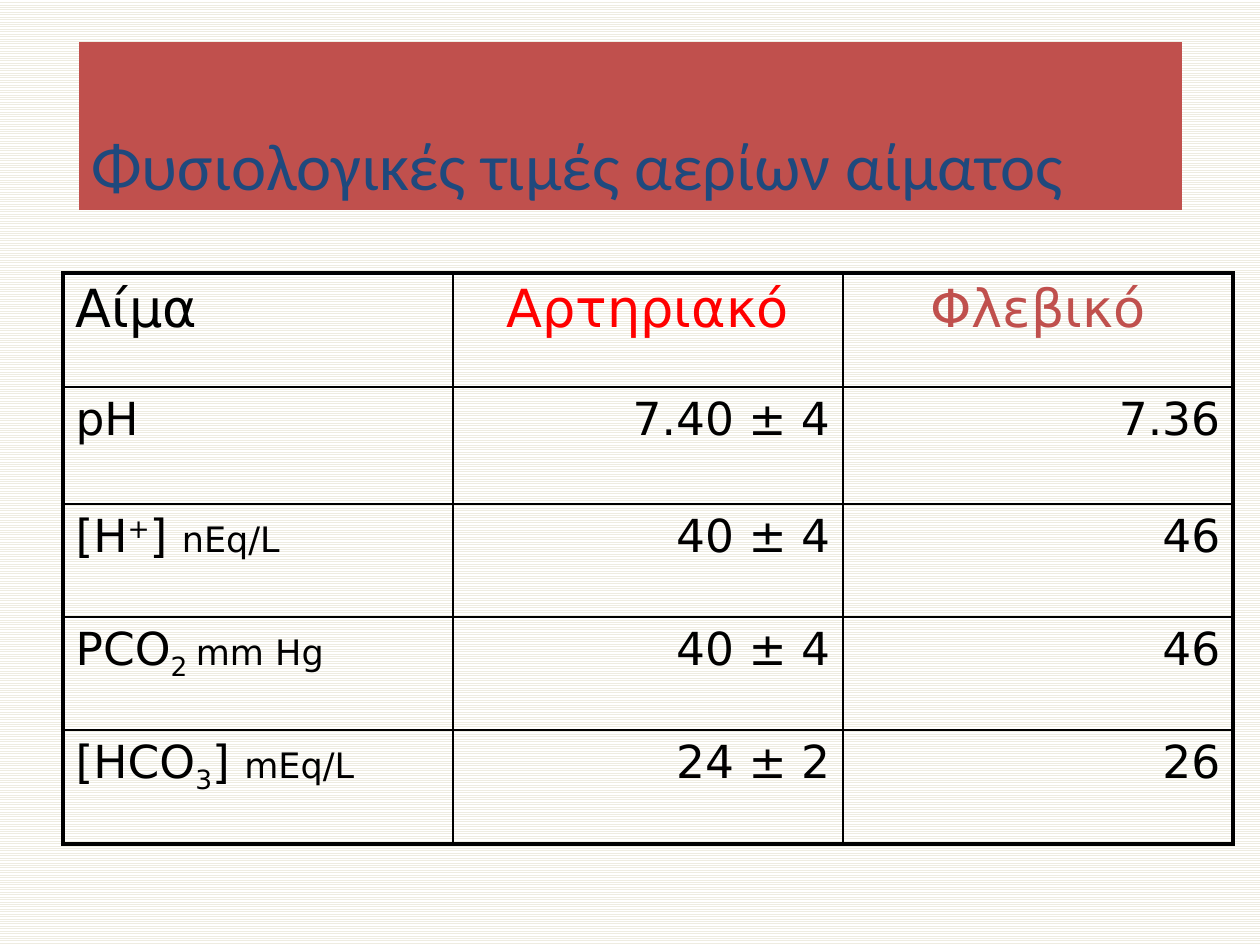
"""Builds a slide with a table of normal blood gas values."""
from lxml.etree import SubElement
from pptx import Presentation
from pptx.dml.color import RGBColor
from pptx.enum.dml import MSO_PATTERN
from pptx.enum.shapes import MSO_SHAPE
from pptx.enum.text import MSO_ANCHOR, PP_ALIGN
from pptx.oxml.ns import qn
from pptx.util import Pt

BLACK = RGBColor(0, 0, 0)
WHITE = RGBColor(255, 255, 255)
CREAM = RGBColor(0xEE, 0xEC, 0xE1)
BRICK = RGBColor(0xC0, 0x50, 0x4D)
NAVY = RGBColor(0x1F, 0x49, 0x7D)
RED = RGBColor(255, 0, 0)

TITLE = "Φυσιολογικές τιμές αερίων αίματος"
HEADINGS = [("Αίμα", BLACK), ("Αρτηριακό", RED), ("Φλεβικό", BRICK)]
UNIT = {"size": 20}
SUPER = {"baseline": 30}
SUB = {"baseline": -25}
ROWS = [
    ([("pH", {})], "7.40 ± 4", "7.36"),
    ([("[H", {}), ("+", SUPER), ("] ", {}), ("nEq/L", UNIT)], "40 ± 4", "46"),
    ([("PCO", {}), ("2 ", SUB), ("mm Hg", UNIT)], "40 ± 4", "46"),
    ([("[HCO", {}), ("3", SUB), ("] ", {}), ("mEq/L", UNIT)], "24 ± 2", "26"),
]
COLUMN_WIDTH = 390
ROW_HEIGHTS = [114, 117, 113, 113, 114]
THIN, THICK = 1, 2.25


def px(length):
    return round(length * 914400 / 126)


def add_text(para, text, font="DejaVu Sans", size=26, color=BLACK, align=PP_ALIGN.LEFT, baseline=0):
    para.alignment = align
    span = para.add_run()
    span.text = text
    span.font.name = font
    span.font.size = Pt(size)
    span.font.color.rgb = color
    if baseline:
        span.font._element.set("baseline", str(baseline * 1000))


def set_borders(cell, widths):
    properties = cell._tc.get_or_add_tcPr()
    for side, width in zip("LRTB", widths):
        line = SubElement(properties, qn(f"a:ln{side}"), w=str(Pt(width)))
        fill = SubElement(line, qn("a:solidFill"))
        SubElement(fill, qn("a:srgbClr"), val=str(BLACK))


def add_title(page):
    box = page.shapes.add_shape(MSO_SHAPE.RECTANGLE, px(79), px(42), px(1103), px(168))
    box.shadow.inherit = False
    box.fill.solid()
    box.fill.fore_color.rgb = BRICK
    box.line.fill.background()
    box.text_frame.word_wrap = True
    box.text_frame.vertical_anchor = MSO_ANCHOR.BOTTOM
    add_text(box.text_frame.paragraphs[0], TITLE, font="Calibri", size=38, color=NAVY)


def add_values(page):
    row_count, column_count = len(ROW_HEIGHTS), len(HEADINGS)
    table = page.shapes.add_table(
        row_count, column_count, px(63), px(273),
        px(COLUMN_WIDTH * column_count), px(sum(ROW_HEIGHTS)),
    ).table
    table.first_row = table.horz_banding = False
    for column in table.columns:
        column.width = px(COLUMN_WIDTH)
    for row, height in enumerate(ROW_HEIGHTS):
        table.rows[row].height = px(height)
        for column in range(column_count):
            cell = table.cell(row, column)
            edges = (column == 0, column == column_count - 1, row == 0, row == row_count - 1)
            set_borders(cell, [THICK if edge else THIN for edge in edges])
            cell.fill.background()

    for column, (text, color) in enumerate(HEADINGS):
        align = PP_ALIGN.CENTER if column else PP_ALIGN.LEFT
        add_text(table.cell(0, column).text_frame.paragraphs[0], text, size=30, color=color, align=align)
    for row, (label, *values) in enumerate(ROWS, 1):
        for text, style in label:
            add_text(table.cell(row, 0).text_frame.paragraphs[0], text, **style)
        for column, value in enumerate(values, 1):
            add_text(table.cell(row, column).text_frame.paragraphs[0], value, align=PP_ALIGN.RIGHT)


def main():
    deck = Presentation()
    deck.slide_width, deck.slide_height = px(1260), px(945)
    page = deck.slides.add_slide(deck.slide_layouts[6])
    backdrop = page.background.fill
    backdrop.patterned()
    backdrop.pattern = MSO_PATTERN.LIGHT_HORIZONTAL
    backdrop.fore_color.rgb = CREAM
    backdrop.back_color.rgb = WHITE
    add_title(page)
    add_values(page)
    deck.save("out.pptx")


if __name__ == "__main__":
    main()
